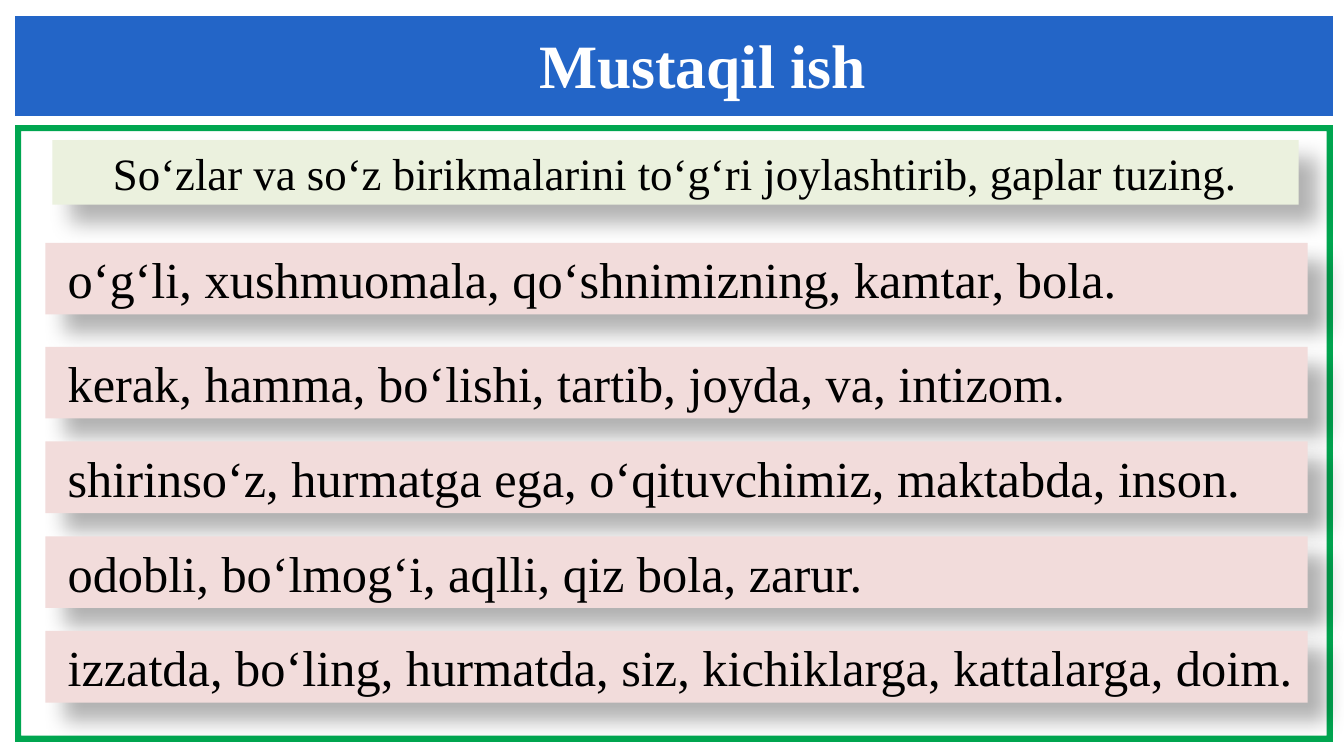
"""Build the "Mustaqil ish" slide: a title band and word-ordering tasks in a green frame."""
from lxml import etree
from pptx import Presentation
from pptx.dml.color import RGBColor
from pptx.enum.shapes import MSO_SHAPE
from pptx.enum.text import MSO_ANCHOR, MSO_AUTO_SIZE, PP_ALIGN
from pptx.oxml.ns import qn
from pptx.util import Inches, Pt

RECTANGLE, FRAME = MSO_SHAPE.RECTANGLE, MSO_SHAPE.FRAME
LEFT, CENTER = PP_ALIGN.LEFT, PP_ALIGN.CENTER
MIDDLE = MSO_ANCHOR.MIDDLE
GROW = MSO_AUTO_SIZE.SHAPE_TO_FIT_TEXT
FONT = "Times New Roman"
COLORS = {
    "band": "2365C7",
    "frame": "00A650",
    "instruction": "EBF1DE",
    "task": "F2DCDB",
    "text": "000000",
    "title": "FFFFFF",
    "shadow": "000000",
}
TASKS = [
    "o‘g‘li, xushmuomala, qo‘shnimizning, kamtar, bola.",
    "kerak, hamma, bo‘lishi, tartib, joyda, va, intizom.",
    "shirinso‘z, hurmatga ega, o‘qituvchimiz, maktabda, inson.",
    "odobli, bo‘lmog‘i, aqlli, qiz bola, zarur.",
    "izzatda, bo‘ling, hurmatda, siz, kichiklarga, kattalarga, doim.",
]
MARGIN, CONTENT_WIDTH = 0.15, 13.07
TASK_LEFT, TASK_WIDTH, TASK_HEIGHT = 0.45, 12.52, 0.71
FIRST_TASK_TOP, SECOND_TASK_TOP, TASK_PITCH = 2.41, 3.44, 0.94


def write_text(shape, text, size, color="text", bold=False, align=LEFT, inset=0.1):
    """Put one formatted paragraph in a shape."""
    frame = shape.text_frame
    frame.word_wrap = True
    frame.auto_size = GROW
    frame.vertical_anchor = MIDDLE
    frame.margin_left = Inches(inset)
    paragraph = frame.paragraphs[0]
    paragraph.alignment = align
    run = paragraph.add_run()
    run.text = text
    run.font.name = FONT
    run.font.size = Pt(size)
    run.font.bold = bold
    run.font.color.rgb = RGBColor.from_string(COLORS[color])


def add_block(kind, left, top, width, height, color, shadow=False):
    """Add a filled shape without outline, optionally with a soft shadow."""
    shape = slide.shapes.add_shape(
        kind, Inches(left), Inches(top), Inches(width), Inches(height))
    shape.fill.solid()
    shape.fill.fore_color.rgb = RGBColor.from_string(COLORS[color])
    shape.line.fill.background()
    shape.shadow.inherit = False
    if shadow:
        effects = shape.element.spPr.find(qn("a:effectLst"))
        outer = etree.SubElement(
            effects, qn("a:outerShdw"), blurRad=str(Pt(15)), dist=str(Pt(18)),
            dir="2700000", algn="ctr", rotWithShape="0")
        shade = etree.SubElement(outer, qn("a:srgbClr"), val=COLORS["shadow"])
        etree.SubElement(shade, qn("a:alpha"), val="30000")
    return shape


presentation = Presentation()
presentation.slide_width = Inches(13.33)
presentation.slide_height = Inches(7.5)
slide = presentation.slides.add_slide(presentation.slide_layouts[5])

title = slide.shapes.title
title.left, title.top = Inches(0.21), Inches(0.21)
title.width, title.height = Inches(12.91), Inches(0.84)
write_text(title, "Mustaqil ish", 44, color="title", bold=True, align=CENTER, inset=0.71)

border = add_block(FRAME, MARGIN, 1.24, CONTENT_WIDTH, 6.12, "frame")
border.adjustments[0] = 0.01
band = add_block(RECTANGLE, MARGIN, 0.16, CONTENT_WIDTH, 0.99, "band")
for backdrop in (border, band):
    title.element.addprevious(backdrop.element)

instruction = add_block(RECTANGLE, 0.52, 1.39, 12.36, 0.64, "instruction", shadow=True)
write_text(
    instruction, "So‘zlar va so‘z birikmalarini to‘g‘ri joylashtirib, gaplar tuzing.",
    32, align=CENTER)

task_tops = [FIRST_TASK_TOP] + [
    SECOND_TASK_TOP + row * TASK_PITCH for row in range(len(TASKS) - 1)]
for task, top in zip(TASKS, task_tops):
    bar = add_block(RECTANGLE, TASK_LEFT, top, TASK_WIDTH, TASK_HEIGHT, "task", shadow=True)
    write_text(bar, task, 36, inset=0.22)

presentation.save("out.pptx")
